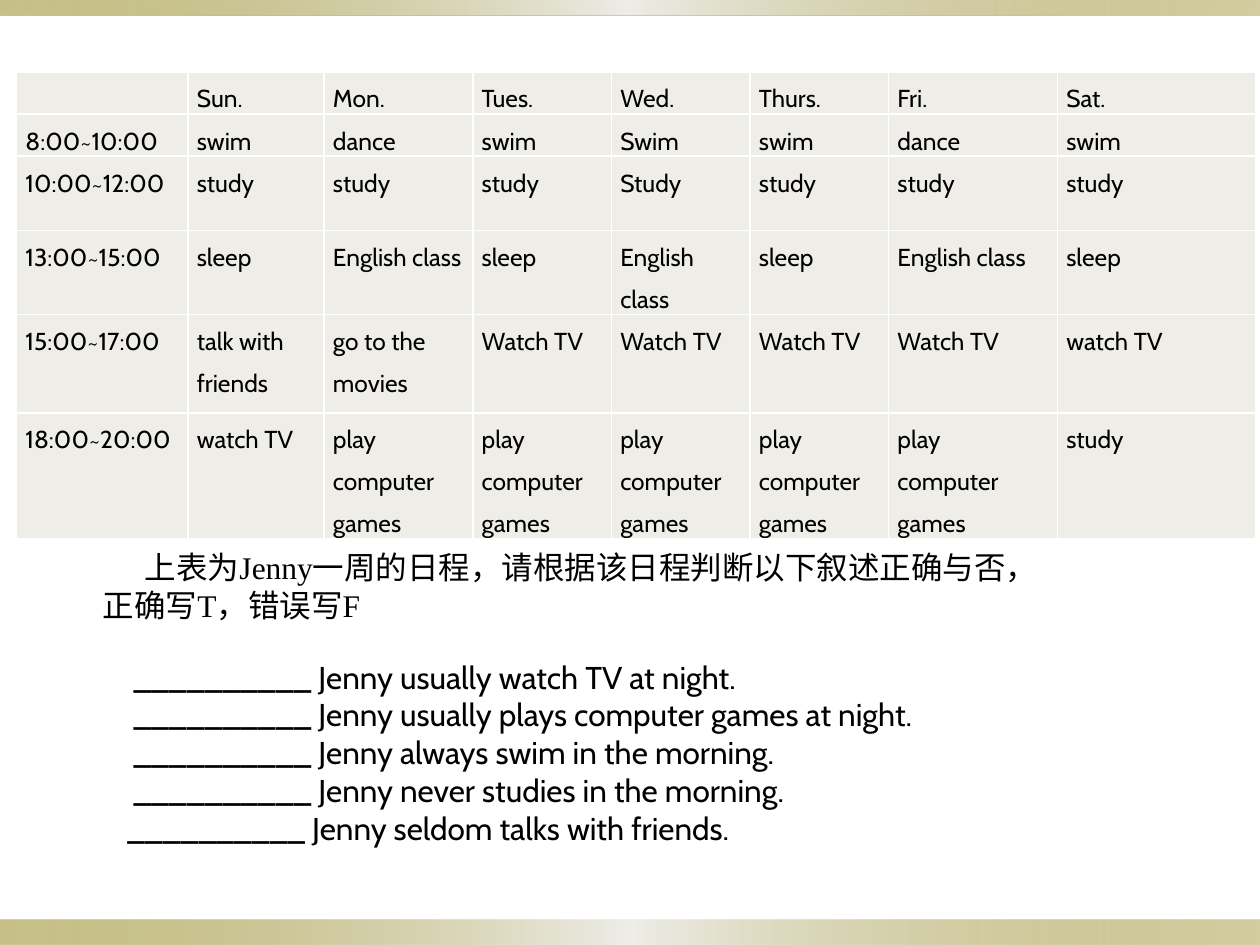
"""Build Jenny's weekly schedule slide with true-or-false statements."""
import pptx
import pptx.dml.color
import pptx.enum.shapes
import pptx.enum.text
import pptx.oxml
import pptx.util
from pptx.oxml.ns import nsdecls

Pt = pptx.util.Pt

THEME = {
    "text": "000000", "cell": "EEEDE8", "border": "FFFFFF", "gold": "918415",
    "latin": "Cabin", "serif": "Times New Roman",
    "table_size": 14, "body_size": 18, "table_leading": 24,
}
BAR_STOPS = [(0, THEME["gold"], 50), (50, THEME["cell"], 100), (100, THEME["gold"], 40)]
BARS = [(525.6, 14.4), (0, 8.64)]

SCHEDULE = [
    ["", "Sun.", "Mon.", "Tues.", "Wed.", "Thurs.", "Fri.", "Sat."],
    ["8:00~10:00", "swim", "dance", "swim", "Swim", "swim", "dance", "swim"],
    ["10:00~12:00", "study", "study", "study", "Study", "study", "study", "study"],
    ["13:00~15:00", "sleep", "English class", "sleep", "English class", "sleep",
     "English class", "sleep"],
    ["15:00~17:00", "talk with friends", "go to the movies", "Watch TV", "Watch TV",
     "Watch TV", "Watch TV", "watch TV"],
    ["18:00~20:00", "watch TV", "play computer games", "play computer games",
     "play computer games", "play\ncomputer\ngames", "play\ncomputer games", "study"],
]
COLUMN_WIDTHS = [98, 77.8, 85, 79.2, 79.2, 79.2, 96.5, 113]
ROW_HEIGHTS = [24, 24, 42.5, 48, 56.2, 72]

INSTRUCTION = [("上表为Jenny一周的日程，请根据该日程判断以下叙述正确与否，正确写T，错误写F", 0, 24)]
BLANK = "__________ "
STATEMENTS = [
    (BLANK + "Jenny usually watch TV at night.", 36, 0),
    (BLANK + "Jenny usually plays computer games at night.", 36, 0),
    (BLANK + "Jenny always swim in the morning.", 36, 0),
    (BLANK + "Jenny never studies in the morning.", 36, 0),
    (BLANK + "Jenny seldom talks with friends.", 0, 32.4),
]


def style(paragraph, face, size):
    paragraph.font.name = face
    paragraph.font.size = Pt(size)
    paragraph.font.color.rgb = pptx.dml.color.RGBColor.from_string(THEME["text"])


def add_bar(slide, top, height):
    bar = slide.shapes.add_shape(
        pptx.enum.shapes.MSO_SHAPE.RECTANGLE, 0, Pt(top), Pt(720), Pt(height))
    bar.shadow.inherit = False
    bar.line.fill.background()
    bar.fill.gradient()
    bar.fill.gradient_angle = 0
    stops = bar.fill._fill._gradFill.gsLst
    for stop in list(stops):
        stops.remove(stop)
    for position, color, alpha in BAR_STOPS:
        stops.append(pptx.oxml.parse_xml(
            f'<a:gs {nsdecls("a")} pos="{position * 1000}"><a:srgbClr val="{color}">'
            f'<a:alpha val="{alpha * 1000}"/></a:srgbClr></a:gs>'))


def format_cell(cell, text, is_header):
    cell.text = text
    cell.margin_left = cell.margin_right = Pt(5)
    cell.margin_top = cell.margin_bottom = 0
    for side in ("lnL", "lnR", "lnT", "lnB"):
        cell._tc.get_or_add_tcPr().append(pptx.oxml.parse_xml(
            f'<a:{side} {nsdecls("a")} w="12700"><a:solidFill>'
            f'<a:srgbClr val="{THEME["border"]}"/></a:solidFill></a:{side}>'))
    cell.fill.solid()
    cell.fill.fore_color.rgb = pptx.dml.color.RGBColor.from_string(THEME["cell"])
    for paragraph in cell.text_frame.paragraphs:
        paragraph.line_spacing = Pt(THEME["table_leading"])
        if is_header:
            paragraph.alignment = pptx.enum.text.PP_ALIGN.JUSTIFY
        style(paragraph, THEME["latin"], THEME["table_size"])


def add_schedule(slide, left, top):
    schedule = slide.shapes.add_table(
        len(SCHEDULE), len(COLUMN_WIDTHS), Pt(left), Pt(top),
        Pt(sum(COLUMN_WIDTHS)), Pt(sum(ROW_HEIGHTS))).table
    schedule.first_row = schedule.horz_banding = False
    for column, width in zip(schedule.columns, COLUMN_WIDTHS):
        column.width = Pt(width)
    for r, (row, height) in enumerate(zip(schedule.rows, ROW_HEIGHTS)):
        row.height = Pt(height)
        for cell, text in zip(row.cells, SCHEDULE[r]):
            format_cell(cell, text, r == 0)


def add_lines(slide, lines, face, left, top, width, height):
    frame = slide.shapes.add_textbox(Pt(left), Pt(top), Pt(width), Pt(height)).text_frame
    frame.word_wrap = True
    for number, (text, margin, indent) in enumerate(lines):
        paragraph = frame.add_paragraph() if number else frame.paragraphs[0]
        paragraph.text = text
        properties = paragraph._p.get_or_add_pPr()
        properties.set("marL", str(Pt(margin)))
        properties.set("indent", str(Pt(indent)))
        style(paragraph, face, THEME["body_size"])


def main():
    deck = pptx.Presentation()
    deck.slide_width, deck.slide_height = Pt(720), Pt(540)
    slide = deck.slides.add_slide(deck.slide_layouts.get_by_name("Blank"))
    for top, height in BARS:
        add_bar(slide, top, height)
    add_schedule(slide, 9.5, 41.2)
    add_lines(slide, INSTRUCTION, THEME["serif"], 51.8, 309.6, 548, 51)
    add_lines(slide, STATEMENTS, THEME["latin"], 33.1, 372.2, 589.7, 116.6)
    deck.save("out.pptx")


if __name__ == "__main__":
    main()
